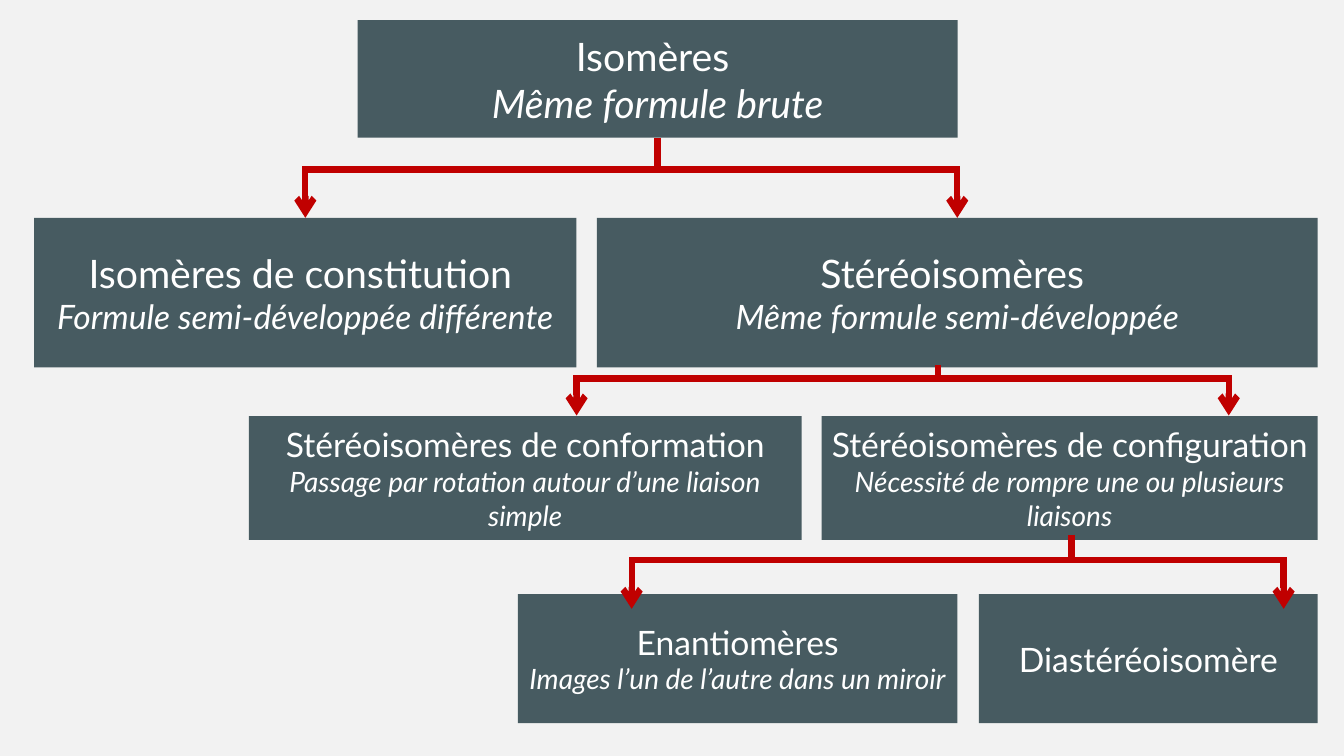
from lxml import etree
from pptx import Presentation
from pptx.dml.color import RGBColor
from pptx.enum.shapes import MSO_CONNECTOR, MSO_SHAPE
from pptx.enum.text import MSO_ANCHOR, PP_ALIGN
from pptx.oxml.ns import qn
from pptx.util import Pt

COLORS = {"background": "F2F2F2", "box": "475B61", "text": "FFFFFF", "arrow": "C00000"}
FONT = "Lato"
LINE_WIDTH = 4.5
TOP, BOTTOM = 0, 2  # connection sites of a rectangle

# Each row: top, height, then its boxes: name, left, width, lines of (text, size)
ROWS = [
    (14.4, 84, [
        ("isomers", 255.4, 428.6,
         [("Isomères ", 28), ("Même formule brute", 28)]),
    ]),
    (155.6, 106.8, [
        ("constitution", 24.5, 387.2,
         [("Isomères de constitution ", 28), ("Formule semi-développée différente", 24)]),
        ("stereo", 426.4, 514.8,
         [("Stéréoisomères ", 28), ("Même formule semi-développée", 24)]),
    ]),
    (297.2, 88.4, [
        ("conformation", 177.8, 394.8,
         [("Stéréoisomères de conformation", 24),
          ("Passage par rotation autour d’une liaison simple", 20)]),
        ("configuration", 586.9, 354.3,
         [("Stéréoisomères de configuration", 24),
          ("Nécessité de rompre une ou plusieurs liaisons", 20)]),
    ]),
    (424.3, 92.2, [
        ("enantiomers", 369.9, 314,
         [("Enantiomères", 24), ("Images l’un de l’autre dans un miroir", 20)]),
        ("diastereoisomer", 699.3, 241.9,
         [("Diastéréoisomère", 24)]),
    ]),
]


def color(name):
    return RGBColor.from_string(COLORS[name])


def add_box(slide, left, top, width, height, lines):
    """Filled rectangle: a plain first line, an italic second one."""
    box = slide.shapes.add_shape(
        MSO_SHAPE.RECTANGLE, Pt(left), Pt(top), Pt(width), Pt(height))
    box.shadow.inherit = False
    box.fill.solid()
    box.fill.fore_color.rgb = color("box")
    box.line.fill.background()
    frame = box.text_frame
    frame.word_wrap = True
    frame.vertical_anchor = MSO_ANCHOR.MIDDLE
    frame.text = "\n".join(text for text, _ in lines)
    for index, (para, (_, size)) in enumerate(zip(frame.paragraphs, lines)):
        para.alignment = PP_ALIGN.CENTER
        font = para.runs[0].font
        font.name, font.size, font.italic = FONT, Pt(size), index > 0
        font.color.rgb = color("text")
    return box


def add_line(slide, x1, y1, x2, y2, arrow=False):
    line = slide.shapes.add_connector(
        MSO_CONNECTOR.STRAIGHT, Pt(x1), Pt(y1), Pt(x2), Pt(y2))
    line.line.color.rgb = color("arrow")
    line.line.width = Pt(LINE_WIDTH)
    if arrow:
        etree.SubElement(line.line._get_or_add_ln(), qn("a:tailEnd"), type="arrow")
    etree.SubElement(line._element.spPr, qn("a:effectLst"))
    return line


def add_branch(slide, stem_x, stem_y, bar_y, drops, tip_y, parent=None, children=()):
    """Stem down to a bar, with an arrow falling from each end of the bar."""
    arrows = [add_line(slide, x, bar_y - LINE_WIDTH / 2, x, tip_y, arrow=True)
              for x in drops]
    add_line(slide, drops[0], bar_y, drops[1], bar_y)
    stem = add_line(slide, stem_x, stem_y, stem_x, bar_y)
    if parent is not None:
        stem.begin_connect(parent, BOTTOM)
    for arrow, child in zip(arrows, children):
        arrow.end_connect(child, TOP)


def main():
    deck = Presentation()
    deck.slide_width, deck.slide_height = Pt(960), Pt(540)
    page = deck.slides.add_slide(deck.slide_layouts[6])
    page.background.fill.solid()
    page.background.fill.fore_color.rgb = color("background")

    # Boxes of the classification
    boxes = {}
    for top, height, row in ROWS:
        for name, left, width, lines in row:
            boxes[name] = add_box(page, left, top, width, height, lines)

    # Branches from each level to the next
    add_branch(page, 469.7, 98.4, 121, (218.1, 683.8), 155.6,
               boxes["isomers"], (boxes["constitution"], boxes["stereo"]))
    add_branch(page, 669.8, 260.6, 270.4, (411.9, 877.7), 296.8)
    add_branch(page, 765.4, 382, 400.2, (451.2, 916.9), 434.9)

    deck.save("out.pptx")


if __name__ == "__main__":
    main()
